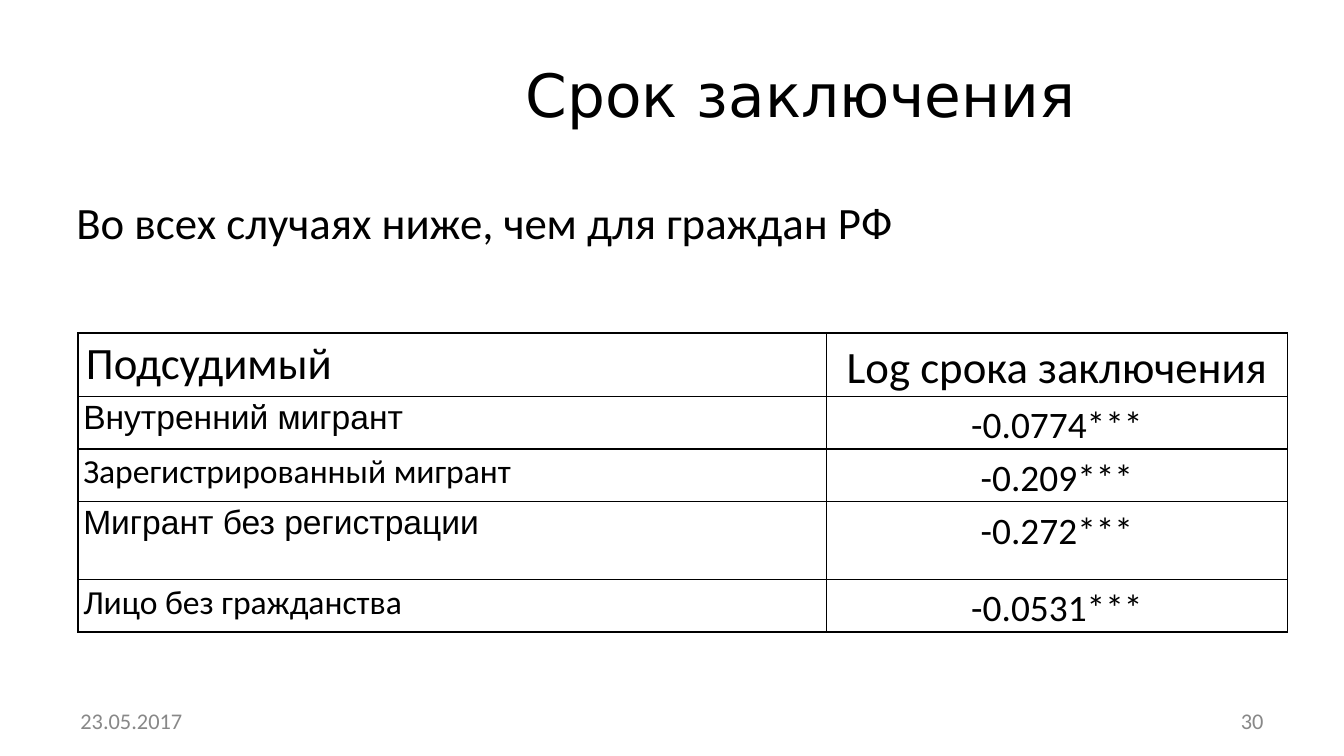
"""Build a slide with a table of sentence-length coefficients by defendant group."""
from dataclasses import dataclass

from lxml import etree
from pptx import Presentation
from pptx.dml.color import RGBColor
from pptx.enum import text
from pptx.oxml import ns
from pptx.util import Inches, Pt


@dataclass(frozen=True)
class Theme:
    ink: str = "000000"
    muted: str = "888888"
    title_font: str = "DejaVu Sans"
    main_font: str = "Calibri"
    label_font: str = "Arial"
    title: int = 32
    lead: int = 24
    value: int = 20
    label: int = 18
    footer: int = 12


theme = Theme()
LEFT, CENTER, RIGHT = text.PP_ALIGN.LEFT, text.PP_ALIGN.CENTER, text.PP_ALIGN.RIGHT
TOP, MIDDLE = text.MSO_ANCHOR.TOP, text.MSO_ANCHOR.MIDDLE


def write(frame, words, size, font=theme.main_font, color=theme.ink, align=LEFT, spacing=1.0):
    frame.word_wrap = True
    para = frame.paragraphs[0]
    para.text = words
    para.alignment = align
    para.line_spacing = spacing
    para.font.size = Pt(size)
    para.font.name = font
    para.font.color.rgb = RGBColor.from_string(color)


def outline(cell):
    properties = cell._tc.get_or_add_tcPr()
    for side in ("lnL", "lnR", "lnT", "lnB"):
        line = etree.SubElement(properties, ns.qn(f"a:{side}"), w=str(Pt(1)))
        fill = etree.SubElement(line, ns.qn("a:solidFill"))
        etree.SubElement(fill, ns.qn("a:srgbClr"), val=theme.ink)


deck = Presentation()
deck.slide_width, deck.slide_height = Inches(10), Inches(10 * 9 / 16)
page = deck.slides.add_slide(deck.slide_layouts[5])

title = page.shapes.title
title.left, title.top = Inches(2.42), Inches(0.23)
title.width, title.height = Inches(7.08), Inches(0.94)
title.text_frame.vertical_anchor = MIDDLE
write(title.text_frame, "Срок заключения", theme.title, theme.title_font, align=CENTER)

rows = [
    ("Подсудимый", "Log срока заключения", theme.main_font, 0.47),
    ("Внутренний мигрант", "-0.0774***", theme.label_font, 0.39),
    ("Зарегистрированный мигрант", "-0.209***", theme.main_font, 0.39),
    ("Мигрант без регистрации", "-0.272***", theme.label_font, 0.58),
    ("Лицо без гражданства", "-0.0531***", theme.main_font, 0.39),
]
widths = (5.57, 3.43)
height = sum(row[-1] for row in rows)
table = page.shapes.add_table(
    len(rows), len(widths), Inches(0.58), Inches(2.48), Inches(sum(widths)), Inches(height)
).table
table.first_row = table.horz_banding = False
for column, width in zip(table.columns, widths):
    column.width = Inches(width)

for index, (label, value, font, row_height) in enumerate(rows):
    table.rows[index].height = Inches(row_height)
    header = index == 0
    label_cell, value_cell = table.rows[index].cells
    for cell, margin in ((label_cell, 0.06 if header else 0.04), (value_cell, 0.09)):
        cell.margin_left = cell.margin_right = Inches(margin)
        cell.margin_top = cell.margin_bottom = 0
        outline(cell)
        cell.fill.background()
    write(label_cell.text_frame, label, theme.lead if header else theme.label, font, spacing=1.07)
    write(value_cell.text_frame, value, theme.lead if header else theme.value,
          align=CENTER, spacing=1.15)

notes = [
    ("Во всех случаях ниже, чем для граждан РФ", 0.47, 1.4, 9.2, 0.5,
     theme.lead, theme.ink, LEFT, TOP),
    ("23.05.2017", 0.5, 5.21, 2.33, 0.3, theme.footer, theme.muted, LEFT, MIDDLE),
    ("30", 7.17, 5.21, 2.33, 0.3, theme.footer, theme.muted, RIGHT, MIDDLE),
]
for words, left, top, width, height, size, color, align, anchor in notes:
    box = page.shapes.add_textbox(Inches(left), Inches(top), Inches(width), Inches(height))
    box.text_frame.vertical_anchor = anchor
    write(box.text_frame, words, size, color=color, align=align)

deck.save("out.pptx")
